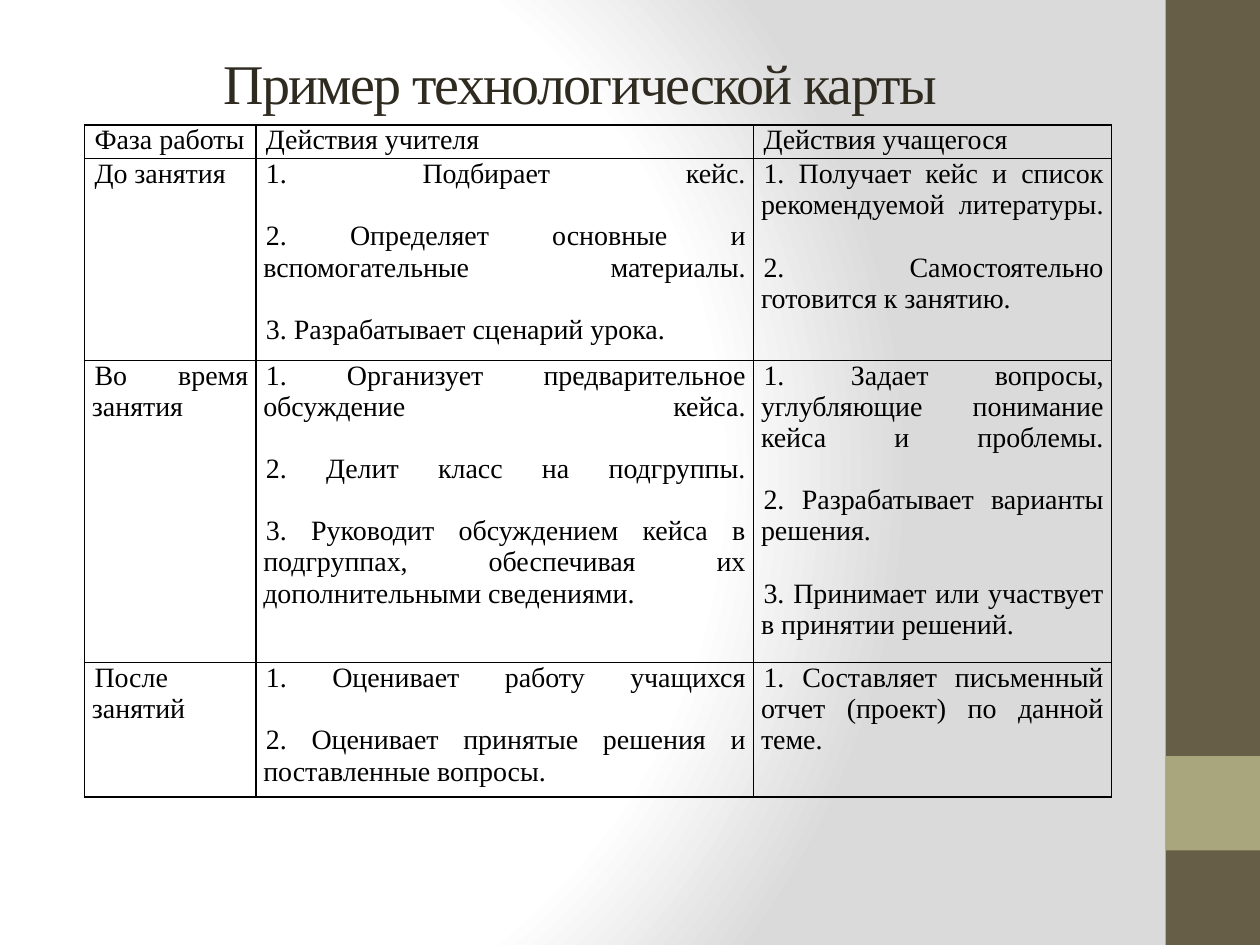
from copy import deepcopy

from lxml import etree
from pptx import Presentation, util as u
from pptx.dml.color import RGBColor
from pptx.enum import shapes, text
from pptx.oxml import parse_xml
from pptx.oxml.ns import nsdecls, qn

# Content: each cell is a list of paragraphs
TITLE = "Пример технологической карты"
ROWS = [
    (["Фаза работы"], ["Действия учителя"], ["Действия учащегося"]),
    (["До занятия"],
     ["1. Подбирает кейс.",
      "2. Определяет основные и вспомогательные материалы.",
      "3. Разрабатывает сценарий урока."],
     ["1. Получает кейс и список рекомендуемой литературы.",
      "2. Самостоятельно готовится к занятию."]),
    (["Во время занятия"],
     ["1. Организует предварительное обсуждение кейса.",
      "2. Делит класс на подгруппы.",
      "3. Руководит обсуждением кейса в подгруппах, обеспечивая их "
      "дополнительными сведениями."],
     ["1. Задает вопросы, углубляющие понимание кейса и проблемы.",
      "2. Разрабатывает варианты решения.",
      "3. Принимает или участвует в принятии решений."]),
    (["После занятий"],
     ["1. Оценивает работу учащихся",
      "2. Оценивает принятые решения и поставленные вопросы."],
     ["1. Составляет письменный отчет (проект) по данной теме."]),
]
COLUMN_WIDTHS = [1.36, 3.95, 2.84]
ROW_HEIGHTS = [0.27, 1.6, 2.4, 1.06]
TABLE_LEFT, TABLE_TOP = 0.67, 0.99

FONT = "Times New Roman"
BLACK = RGBColor(0x00, 0x00, 0x00)
TITLE_INK = RGBColor(0x2F, 0x2B, 0x20)
BROWN = RGBColor(0x67, 0x5E, 0x47)
OLIVE = RGBColor(0xA9, 0xA5, 0x7C)
GRADIENT = [(0, "FFFFFF"), (75, "FFFFFF"), (100, "DADADA")]

WIDTH, HEIGHT = 10, 7.5
BAND = 0.75


def set_background(page):
    stops = "".join(f'<a:gs pos="{share * 1000}"><a:srgbClr val="{color}"/></a:gs>'
                    for share, color in GRADIENT)
    page.element.cSld.insert(0, parse_xml(
        f'<p:bg {nsdecls("p", "a")}><p:bgPr><a:gradFill rotWithShape="1">'
        f'<a:gsLst>{stops}</a:gsLst><a:path path="circle">'
        '<a:fillToRect l="20000" t="50000" r="100000" b="50000"/></a:path>'
        '</a:gradFill><a:effectLst/></p:bgPr></p:bg>'))


def add_block(page, top, height, color):
    block = page.shapes.add_shape(
        shapes.MSO_SHAPE.RECTANGLE, u.Inches(WIDTH - BAND), u.Inches(top),
        u.Inches(BAND), u.Inches(height))
    block.shadow.inherit = False
    block.fill.solid()
    block.fill.fore_color.rgb = color
    block.line.fill.background()


def add_span(para, words, size, color, align, indent):
    para.alignment = align
    properties = para._p.get_or_add_pPr()
    properties.set("marL", "0")
    properties.set("indent", str(u.Inches(indent)))
    span = para.add_run()
    span.text = words
    span.font.name = FONT
    span.font.size = u.Pt(size)
    span.font.color.rgb = color
    return span


def add_break(para, span):
    """End the paragraph with a line break in the style of its text."""
    para.add_line_break()
    style = span._r.get_or_add_rPr()
    para._p[-1].append(deepcopy(style))
    end = deepcopy(style)
    end.tag = qn("a:endParaRPr")
    para._p.append(end)


def set_borders(cell):
    properties = cell._tc.get_or_add_tcPr()
    for position, side in enumerate(("lnL", "lnR", "lnT", "lnB")):
        line = etree.Element(qn(f"a:{side}"), w=str(u.Pt(1)))
        fill = etree.SubElement(line, qn("a:solidFill"))
        etree.SubElement(fill, qn("a:srgbClr"), val=str(BLACK))
        properties.insert(position, line)


def fill_cell(cell, items):
    cell.fill.background()
    set_borders(cell)
    cell.margin_left = cell.margin_right = u.Inches(0.06)
    cell.margin_top = cell.margin_bottom = 0
    frame = cell.text_frame
    for number, item in enumerate(items):
        para = frame.add_paragraph() if number else frame.paragraphs[0]
        span = add_span(para, item, 16, BLACK, text.PP_ALIGN.JUSTIFY, 0.02)
        if number < len(items) - 1:
            add_break(para, span)


def add_title(page):
    title = page.shapes.title
    title.left, title.top, title.width, title.height = map(
        u.Inches, (0.59, 0.38, 7.54, 0.54))
    frame = title.text_frame
    frame.word_wrap = True
    frame.auto_size = text.MSO_AUTO_SIZE.SHAPE_TO_FIT_TEXT
    frame.vertical_anchor = text.MSO_ANCHOR.MIDDLE
    frame.margin_left = frame.margin_right = 0
    frame.margin_top = frame.margin_bottom = 0
    span = add_span(frame.paragraphs[0], TITLE, 32, TITLE_INK,
                    text.PP_ALIGN.CENTER, 0.49)
    span._r.get_or_add_rPr().set("spc", "-100")


def add_plan(page):
    table = page.shapes.add_table(
        len(ROWS), len(COLUMN_WIDTHS), u.Inches(TABLE_LEFT), u.Inches(TABLE_TOP),
        u.Inches(sum(COLUMN_WIDTHS)), u.Inches(sum(ROW_HEIGHTS))).table
    table.first_row = table.horz_banding = False
    for column, width in zip(table.columns, COLUMN_WIDTHS):
        column.width = u.Inches(width)
    for row, height, contents in zip(table.rows, ROW_HEIGHTS, ROWS):
        row.height = u.Inches(height)
        for cell, items in zip(row.cells, contents):
            fill_cell(cell, items)


def main():
    deck = Presentation()
    deck.slide_width, deck.slide_height = u.Inches(WIDTH), u.Inches(HEIGHT)
    page = deck.slides.add_slide(deck.slide_layouts[5])
    set_background(page)
    # Side band with its accent square
    add_block(page, 0, HEIGHT, BROWN)
    add_block(page, HEIGHT - 2 * BAND, BAND, OLIVE)
    add_title(page)
    add_plan(page)
    deck.save("out.pptx")


if __name__ == "__main__":
    main()
